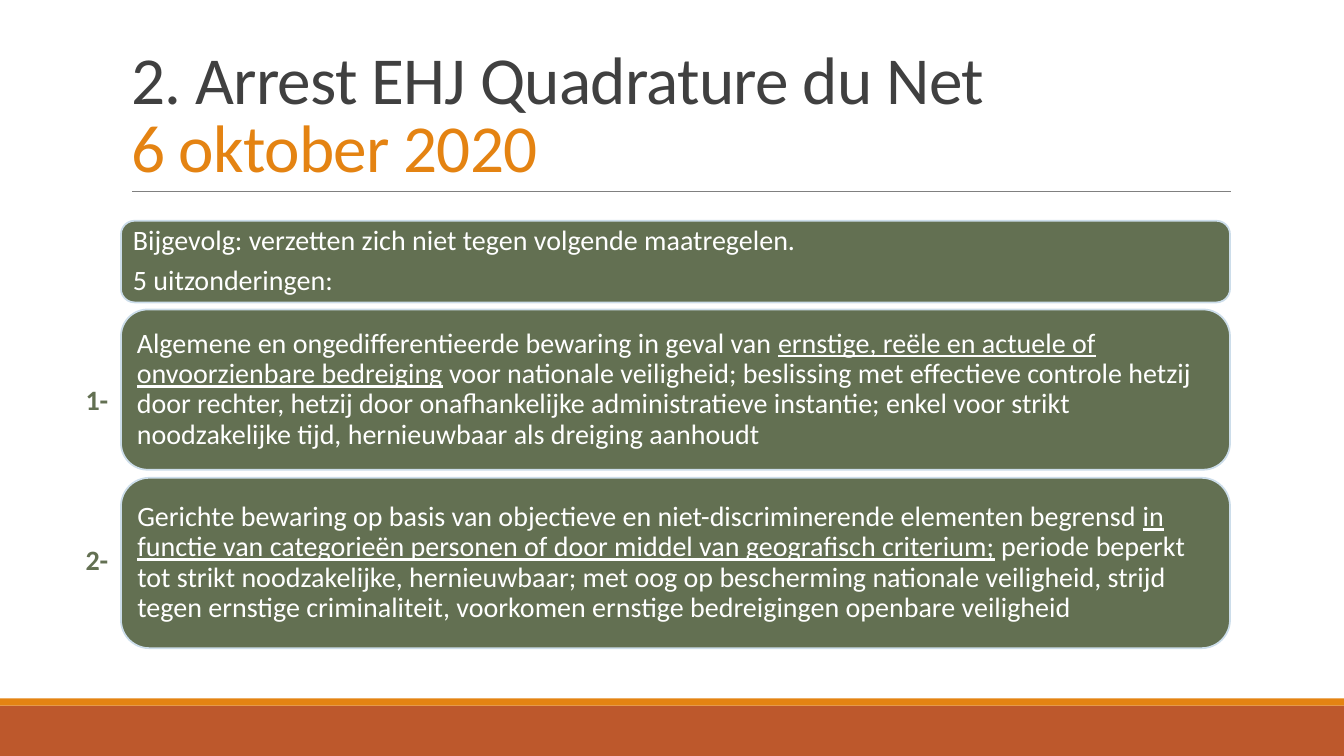
from pptx import Presentation
from pptx.dml.color import RGBColor
from pptx.enum.shapes import MSO_CONNECTOR, MSO_SHAPE
from pptx.enum.text import MSO_ANCHOR, MSO_AUTO_SIZE, PP_ALIGN
from pptx.oxml.ns import qn
from pptx.util import Inches, Pt
from lxml import etree

RECTANGLE, ROUNDED = MSO_SHAPE.RECTANGLE, MSO_SHAPE.ROUNDED_RECTANGLE
STRAIGHT = MSO_CONNECTOR.STRAIGHT
MIDDLE, BOTTOM = MSO_ANCHOR.MIDDLE, MSO_ANCHOR.BOTTOM
LEFT = PP_ALIGN.LEFT
NO_AUTOFIT = MSO_AUTO_SIZE.NONE

WHITE = RGBColor(0xFF, 0xFF, 0xFF)
DARK = RGBColor(0x40, 0x40, 0x40)
GREY = RGBColor(0x80, 0x80, 0x80)
ORANGE = RGBColor(0xE4, 0x83, 0x12)
RUST = RGBColor(0xBD, 0x58, 0x2C)
GREEN = RGBColor(0x63, 0x70, 0x52)
PALE_BLUE = RGBColor(0xCC, 0xDD, 0xEA)

FONT = "Calibri"
BODY_SIZE = 20
BOX_LEFT, BOX_WIDTH = 1.2, 11

# Each box: top, height, paragraphs made of (text, underlined) runs
BOXES = [
    (2.19, 0.81, [
        [("Bijgevolg: verzetten zich niet tegen volgende maatregelen.", False)],
        [("5 uitzonderingen:", False)],
    ]),
    (3.07, 1.59, [[
        ("Algemene en ongedifferentieerde bewaring in geval van ", False),
        ("ernstige, reële en actuele of onvoorzienbare bedreiging", True),
        (" voor nationale veiligheid; beslissing met effectieve controle hetzij "
         "door rechter, hetzij door onafhankelijke administratieve instantie; "
         "enkel voor strikt noodzakelijke tijd, hernieuwbaar als dreiging "
         "aanhoudt", False),
    ]]),
    (4.74, 1.69, [[
        ("Gerichte bewaring op basis van objectieve en niet-discriminerende "
         "elementen begrensd ", False),
        ("in functie van categorieën personen of door middel van geografisch "
         "criterium;", True),
        (" periode beperkt tot strikt noodzakelijke, hernieuwbaar; met oog op "
         "bescherming nationale veiligheid, strijd tegen ernstige criminaliteit, "
         "voorkomen ernstige bedreigingen openbare veiligheid", False),
    ]]),
]
NUMBERS = [("1-", 3.75), ("2-", 5.33)]


class SlideBuilder:
    def __init__(self, slide):
        self.slide = slide

    def style(self, run, color, size=BODY_SIZE, bold=False, underline=False):
        font = run.font
        font.name, font.size, font.bold = FONT, Pt(size), bold
        font.underline = underline
        font.color.rgb = color

    def title(self, lines, colors):
        shape = self.slide.shapes.title
        shape.left, shape.top = Inches(BOX_LEFT), Inches(0.31)
        shape.width, shape.height = Inches(BOX_WIDTH), Inches(1.59)
        frame = shape.text_frame
        frame.text = "\v".join(lines)
        frame.word_wrap, frame.auto_size = True, NO_AUTOFIT
        frame.vertical_anchor = BOTTOM
        paragraph = frame.paragraphs[0]
        paragraph.alignment, paragraph.line_spacing = LEFT, 0.85
        for run, color in zip(paragraph.runs, colors):
            self.style(run, color, 48)
            run.font._element.set("spc", "-50")

    def shape(self, kind, left, top, width, height, fill):
        shape = self.slide.shapes.add_shape(
            kind, Inches(left), Inches(top), Inches(width), Inches(height))
        shape.shadow.inherit = False
        shape.fill.solid()
        shape.fill.fore_color.rgb = fill
        shape.line.fill.background()
        return shape

    def text_box(self, top, height, paragraphs):
        shape = self.shape(ROUNDED, BOX_LEFT, top, BOX_WIDTH, height, GREEN)
        shape.line.color.rgb = PALE_BLUE
        shape.line.width = Pt(1.25)
        frame = shape.text_frame
        frame.word_wrap, frame.vertical_anchor = True, MIDDLE
        frame.margin_left = frame.margin_right = Inches(0.08)
        frame.margin_top = frame.margin_bottom = Inches(0.08)
        for index, runs in enumerate(paragraphs):
            paragraph = frame.add_paragraph() if index else frame.paragraphs[0]
            paragraph.alignment, paragraph.line_spacing = LEFT, 0.9
            paragraph.space_after = Pt(7)
            for text, underline in runs:
                run = paragraph.add_run()
                run.text = text
                self.style(run, WHITE, underline=underline)

    def number(self, text, top):
        box = self.slide.shapes.add_textbox(
            Inches(0.75), Inches(top), Inches(0.56), Inches(0.44))
        box.text_frame.word_wrap = True
        box.text_frame.text = text
        self.style(box.text_frame.paragraphs[0].runs[0], GREEN, bold=True)

    def rule(self, left, right, y):
        line = self.slide.shapes.add_connector(
            STRAIGHT, Inches(left), Inches(y), Inches(right), Inches(y))
        line.line.color.rgb = GREY
        line.line.width = Pt(0.5)
        etree.SubElement(line._element.spPr, qn("a:effectLst"))


def main():
    presentation = Presentation()
    presentation.slide_width, presentation.slide_height = Inches(13.33), Inches(7.5)
    title_only = presentation.slide_layouts[5]
    builder = SlideBuilder(presentation.slides.add_slide(title_only))

    # Footer bands and title rule
    builder.shape(RECTANGLE, 0, 7, 13.33, 0.5, RUST)
    builder.shape(RECTANGLE, 0, 6.93, 13.33, 0.07, ORANGE)
    builder.rule(1.31, 12.21, 1.9)

    # Title
    builder.title(["2. Arrest EHJ Quadrature du Net ", "6 oktober 2020"],
                  [DARK, ORANGE])

    # Boxes and their numbers
    for top, height, paragraphs in BOXES:
        builder.text_box(top, height, paragraphs)
    for text, top in NUMBERS:
        builder.number(text, top)

    presentation.save("out.pptx")


if __name__ == "__main__":
    main()
